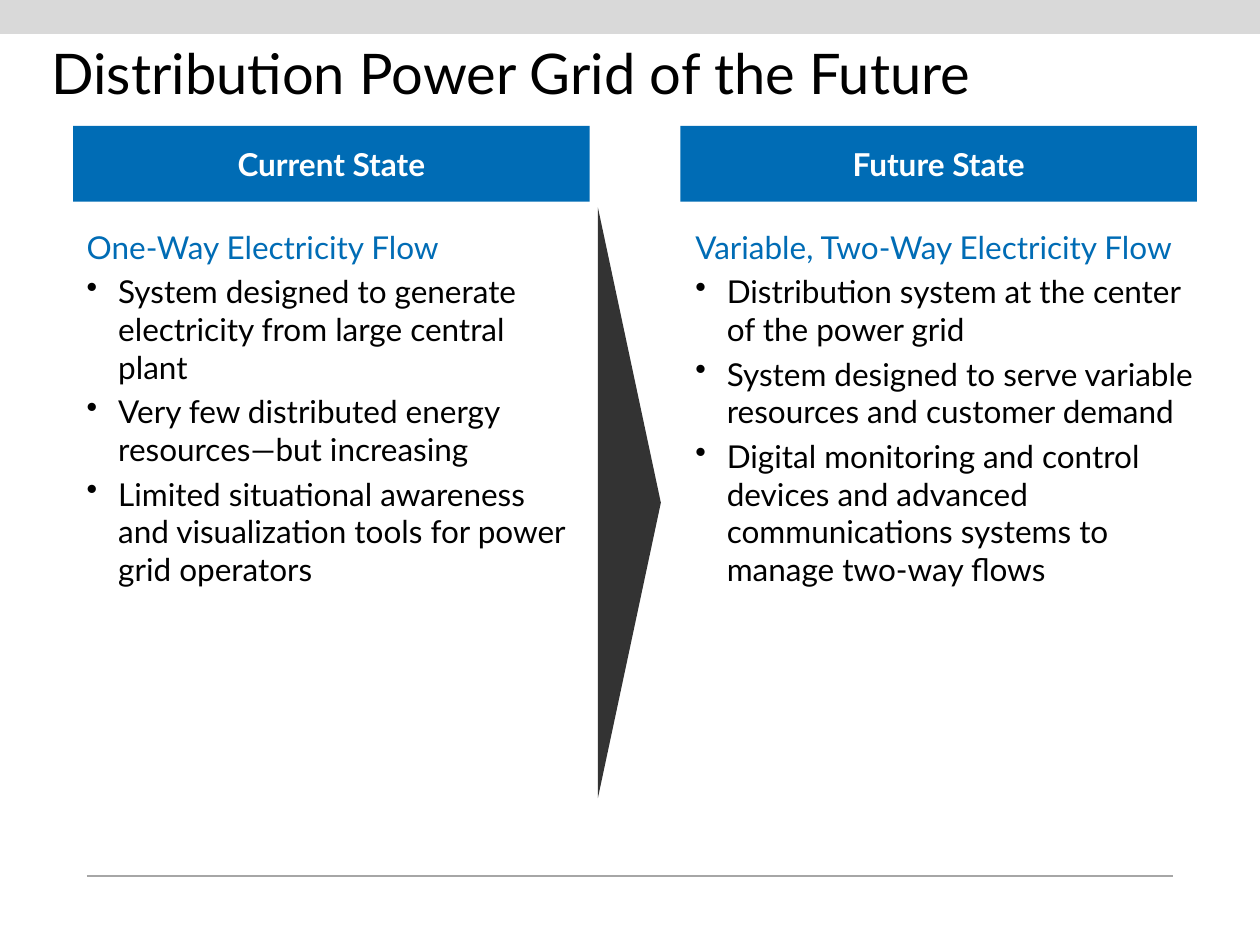
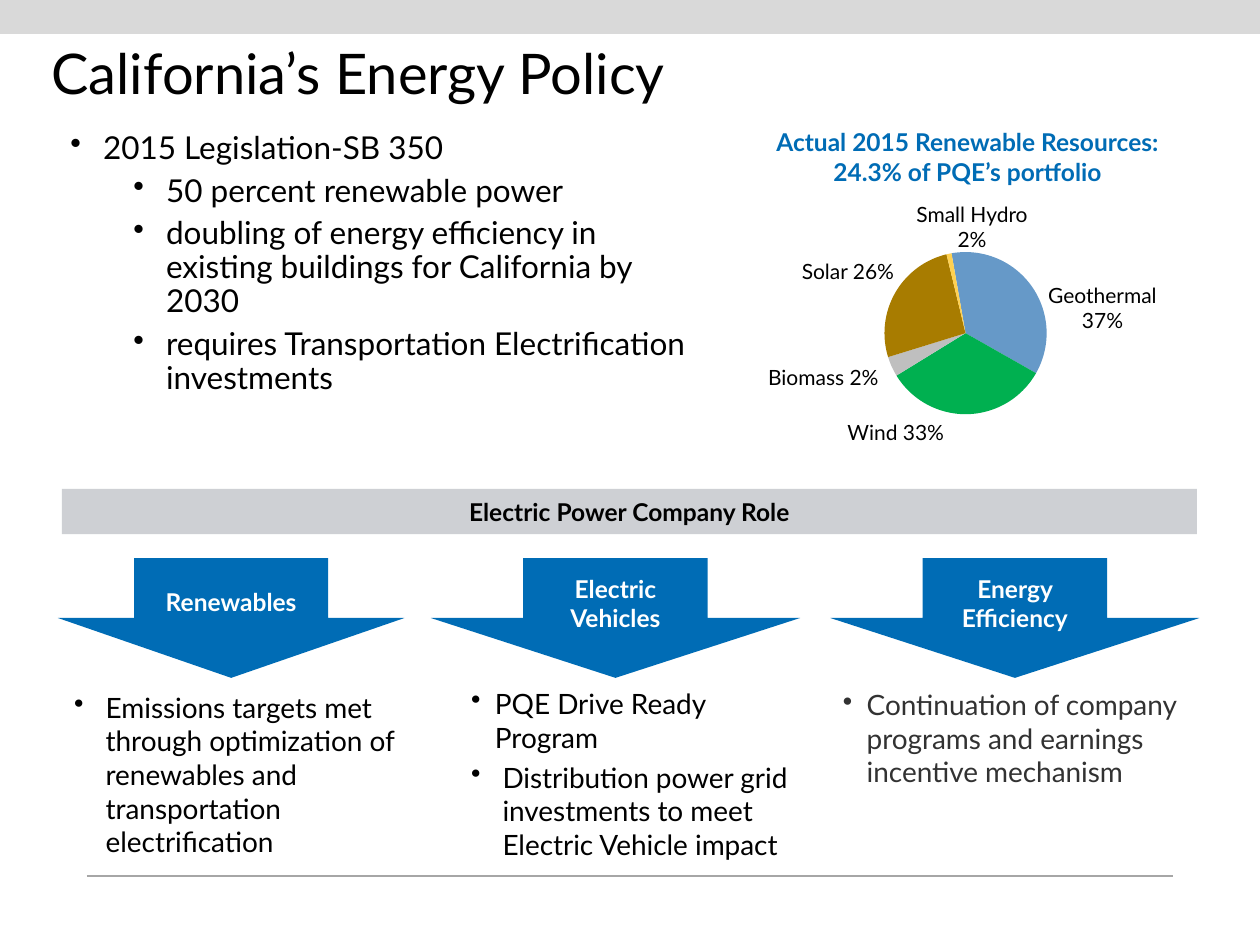
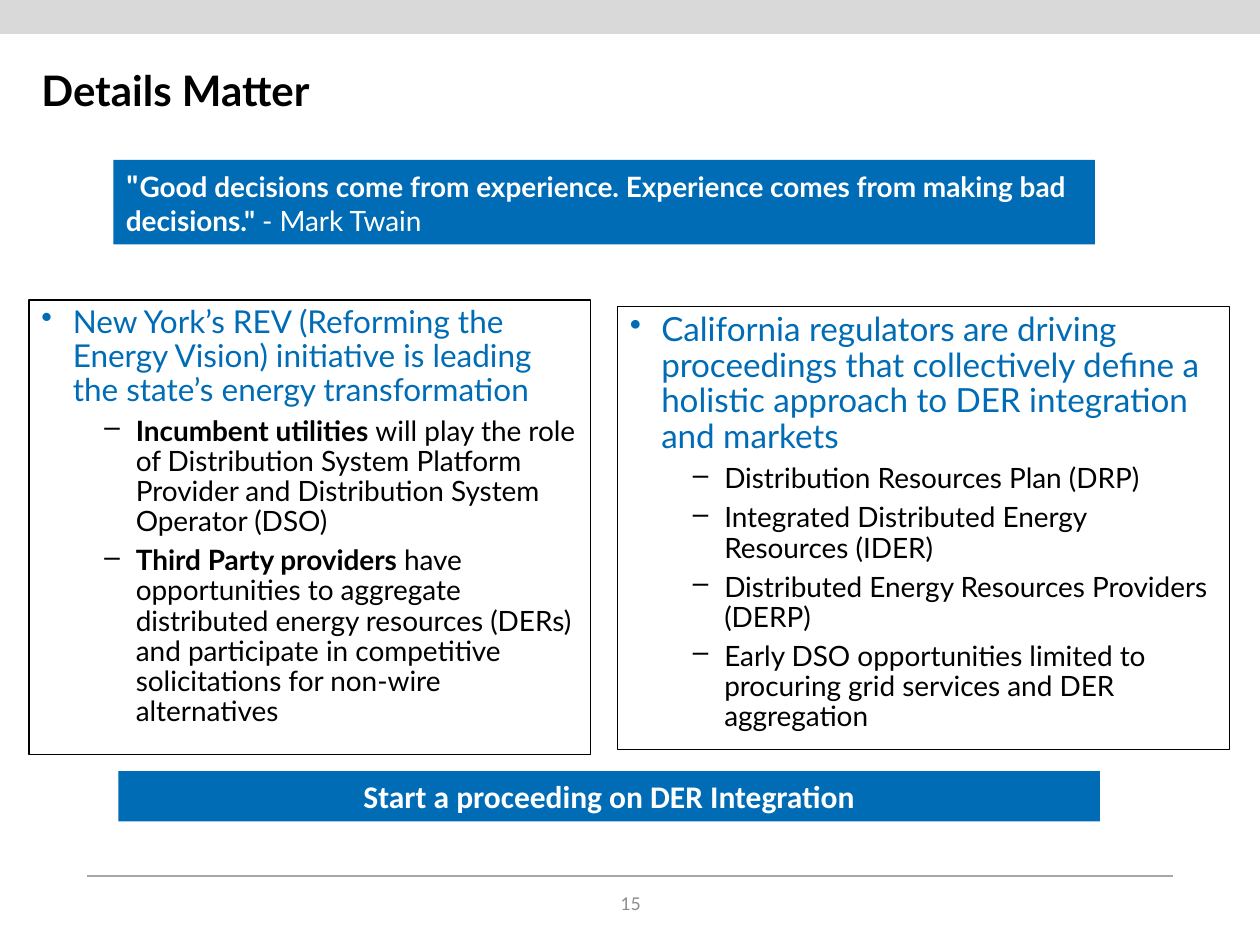
from dataclasses import dataclass
from lxml.etree import SubElement
from pptx import Presentation
from pptx.chart.data import CategoryChartData
from pptx.dml.color import RGBColor
from pptx.enum.chart import XL_CHART_TYPE
from pptx.enum.shapes import MSO_CONNECTOR, MSO_SHAPE
from pptx.enum.text import MSO_ANCHOR, PP_ALIGN
from pptx.oxml.ns import qn
from pptx.util import Inches, Pt

COLORS = {
    "blue": "006CB5", "black": "000000", "white": "FFFFFF", "band": "D9D9D9",
    "rule": "A6A6A6", "charcoal": "333333", "note": "323232", "role": "CED0D4",
    "number": "8C8C8C",
}
FONT = "Lato"


@dataclass
class Para:
    """A paragraph; text is a string or a list of (text, bold, font, size) spans."""
    text: str | list
    size: float = 18
    color: str = "black"
    bold: bool = False
    font: str = FONT
    centered: bool = False
    bullet: str = ""
    indent: float = 0.25
    hanging: float = 0.25
    before: float = 0
    spacing: float = 1


def point(text, **style):
    return Para(text, **{"bullet": "•", "before": 3.8, **style})


def legislation(text, indent=0.76):
    return point(text, indent=indent, hanging=0.26, before=5, spacing=0.9)


def headline(text, size):
    return point(text, size=size, color="blue", before=10, spacing=0.9)


def detail(text):
    return Para(text, 16, bullet="–", indent=0.75, before=5, spacing=0.9)


def label(text, size=14, color="white", **style):
    return Para(text, size, color, **{"bold": True, "centered": True, **style})


# Content
STATES = [
    ("Current State", 0.58, (0.59, 1.76, 4, 3.43), "One-Way Electricity Flow", [
        "System designed to generate electricity from large central plant",
        "Very few distributed energy resources—but increasing",
        "Limited situational awareness and visualization tools for power grid operators"]),
    ("Future State", 5.4, (5.42, 1.76, 4.21, 3), "Variable, Two-Way Electricity Flow", [
        "Distribution system at the center of the power grid",
        "System designed to serve variable resources and customer demand",
        "Digital monitoring and control devices and advanced communications systems "
        "to manage two-way flows"]),
]
POLICY = [
    legislation("2015 Legislation-SB 350", indent=0.26),
    legislation("50 percent renewable power"),
    legislation("doubling of energy efficiency in existing buildings for California by 2030"),
    legislation("requires Transportation Electrification investments"),
]
ROLES = [
    ("Renewables", (0.46, 2.75), 0.56, (0.49, 5.43, 2.85, 1.45), [
        point("Emissions targets met through optimization of renewables and "
              "transportation electrification", size=16)]),
    ("Electric Vehicles", (3.42, 2.93), 0.5, (3.64, 5.4, 2.76, 1.5), [
        point("PQE Drive Ready Program", size=16, indent=0.19, hanging=0.19, before=0),
        point("Distribution power grid investments to meet Electric Vehicle impact",
              size=16)]),
    ("Energy Efficiency", (6.59, 2.93), 0.5, (6.59, 5.41, 2.91, 0.91), [
        point("Continuation of company programs and earnings incentive mechanism",
              size=16, color="note", indent=0.19, hanging=0.19, before=0)]),
]
PIE_SLICES = [(36, "6699C8"), (33, "00B050"), (4, "BFBFBF"), (26, "A87C00"), (1, "FFD151")]
PIE_LABELS = [
    ("Solar 26%", (6.17, 2, 1.12, 0.3), 0.1),
    ("Small Hydro 2%", (7.08, 1.55, 1.27, 0.5), 0.1),
    ("Geothermal 37%", (8.14, 2.19, 1.22, 0.5), 0.05),
    ("Wind 33%", (6.51, 3.28, 1.2, 0.3), 0.1),
    ("Biomass 2%", (5.79, 2.84, 1.49, 0.3), 0.1),
]
PORTFOLIO = ["Actual 2015 Renewable Resources:", "24.3% of PQE’s portfolio"]
REGIONS = [
    ((0.23, 2.38, 4.46, 3.61), [
        headline("New York’s REV (Reforming the Energy Vision) initiative is leading "
                 "the state’s energy transformation", 18),
        detail([("Incumbent utilities ", True, FONT, 16),
                ("will play the role of Distribution System Platform Provider and "
                 "Distribution System Operator (DSO)", False, FONT, 16)]),
        detail([("Third Party providers ", True, FONT, 16),
                ("have opportunities to aggregate distributed energy resources (DERs) and "
                 "participate in competitive solicitations for non-wire alternatives",
                 False, FONT, 16)])]),
    ((4.9, 2.43, 4.86, 3.52), [
        headline("California regulators are driving proceedings that collectively define "
                 "a holistic approach to DER integration and markets", 19),
        detail("Distribution Resources Plan (DRP)"),
        detail("Integrated Distributed Energy Resources (IDER)"),
        detail("Distributed Energy Resources Providers (DERP)"),
        detail("Early DSO opportunities limited to procuring grid services and DER "
               "aggregation")]),
]
QUOTE = Para([
    ('"', True, "Calibri", 18),
    ('Good decisions come from experience. Experience comes from making bad decisions." ',
     True, FONT, 16),
    ("- Mark Twain", False, FONT, 16)], color="white")


def rgb(color):
    return RGBColor.from_string(COLORS.get(color, color))


def write(shape, paras, middle=False, inset=0.1):
    frame = shape.text_frame
    frame.word_wrap = True
    frame.vertical_anchor = MSO_ANCHOR.MIDDLE if middle else MSO_ANCHOR.TOP
    frame.margin_left = frame.margin_right = Inches(inset)
    for index, item in enumerate(paras):
        para = frame.add_paragraph() if index else frame.paragraphs[0]
        para.alignment = PP_ALIGN.CENTER if item.centered else PP_ALIGN.LEFT
        para.line_spacing = item.spacing
        para.space_before = Pt(item.before)
        if item.bullet:
            properties = para._p.get_or_add_pPr()
            properties.set("marL", str(Inches(item.indent)))
            properties.set("indent", str(-Inches(item.hanging)))
            SubElement(properties, qn("a:buChar")).set("char", item.bullet)
        spans = item.text
        if isinstance(spans, str):
            spans = [(spans, item.bold, item.font, item.size)]
        for text, bold, font, size in spans:
            span = para.add_run()
            span.text = text
            span.font.bold = bold
            span.font.name = font
            span.font.size = Pt(size)
            span.font.color.rgb = rgb(item.color)


def add_text(page, place, paras, middle=False, inset=0.1):
    write(page.shapes.add_textbox(*map(Inches, place)), paras, middle, inset)


def add_block(page, place, fill, paras=(), kind=MSO_SHAPE.RECTANGLE, adjust=(),
              outline=None, middle=True):
    block = page.shapes.add_shape(kind, *map(Inches, place))
    block.shadow.inherit = False
    block.fill.solid()
    block.fill.fore_color.rgb = rgb(fill)
    if outline:
        block.line.color.rgb = rgb(outline)
        block.line.width = Pt(0.75)
    else:
        block.line.fill.background()
    for index, value in enumerate(adjust):
        block.adjustments[index] = value
    write(block, paras, middle)
    return block


def add_page(deck, title, place=(0.31, 0.27, 9.41, 0.67), size=32, bold=False):
    """Add a slide with the top band, footer rule and title."""
    page = deck.slides.add_slide(deck.slide_layouts[6])
    add_block(page, (0, 0, 10, 0.27), "band")
    rule = page.shapes.add_connector(
        MSO_CONNECTOR.STRAIGHT, *map(Inches, (0.69, 6.95, 9.31, 6.95)))
    rule.line.color.rgb = rgb("rule")
    rule.line.width = Pt(1)
    SubElement(rule._element.spPr, qn("a:effectLst"))
    add_text(page, place, [Para(title, size, bold=bold, spacing=0.9)], middle=True)
    return page


def add_pie(page, place):
    data = CategoryChartData()
    data.categories = [str(number) for number in range(1, len(PIE_SLICES) + 1)]
    data.add_series("Series 1", [value for value, _ in PIE_SLICES])
    chart = page.shapes.add_chart(XL_CHART_TYPE.PIE, *map(Inches, place), data).chart
    chart.has_legend = chart.has_title = False
    chart.font.name = "Calibri"
    chart.font.size = Pt(18)
    chart.font.color.rgb = rgb("black")
    plot = chart.plots[0]
    plot.vary_by_categories = True
    for index, (_, color) in enumerate(PIE_SLICES):
        fill = plot.series[0].points[index].format.fill
        fill.solid()
        fill.fore_color.rgb = rgb(color)

    pie = plot._element
    angle = pie.find(qn("c:firstSliceAng"))
    if angle is None:
        angle = SubElement(pie, qn("c:firstSliceAng"))
    angle.set("val", "350")
    area = pie.getparent()
    layout = area.find(qn("c:layout"))
    if layout is None:
        layout = SubElement(area, qn("c:layout"))
        area.insert(0, layout)
    manual = SubElement(layout, qn("c:manualLayout"))
    settings = {"layoutTarget": "inner", "xMode": "edge", "yMode": "edge",
                "x": 0.04, "y": 0.03, "w": 0.94, "h": 0.94}
    for name, value in settings.items():
        SubElement(manual, qn(f"c:{name}")).set("val", str(value))


def build_grid_page(deck):
    page = add_page(deck, "Distribution Power Grid of the Future")
    for state, left, place, flow, points in STATES:
        add_text(page, place, [Para(flow, color="blue"), *map(point, points)])
        add_block(page, (left, 1, 4.1, 0.6), "blue", [label(state, 18)],
                  MSO_SHAPE.ROUNDED_RECTANGLE, [0])
    wedge = add_block(page, (2.65, 3.74, 4.69, 0.5), "charcoal",
                      kind=MSO_SHAPE.ISOSCELES_TRIANGLE, adjust=[0.5])
    wedge.rotation = 90


def build_policy_page(deck):
    page = add_page(deck, "California’s Energy Policy")
    add_text(page, (0.46, 1, 5.11, 2.46), POLICY)
    for role, (left, width), shaft, place, paras in ROLES:
        add_block(page, (left, 4.43, width, 0.95), "blue", [label(role)],
                  MSO_SHAPE.DOWN_ARROW, [shaft, 0.5])
        add_text(page, place, paras)
    add_block(page, (0.49, 3.88, 9.01, 0.36), "role",
              [label("Electric Power Company Role", color="black")])
    add_pie(page, (6.96, 1.96, 1.38, 1.37))
    for text, place, inset in PIE_LABELS:
        add_text(page, place, [label(text, 12, "black", bold=False)], True, inset)
    add_text(page, (5.65, 0.96, 4.06, 0.57),
             [label(text, color="blue") for text in PORTFOLIO])


def build_details_page(deck):
    page = add_page(deck, "Details Matter", (0.23, 0.4, 9.54, 0.67), 24, True)
    for place, paras in REGIONS:
        add_block(page, place, "white", paras, outline="black", middle=False)
    add_block(page, (0.9, 1.27, 7.79, 0.67), "blue", [QUOTE], middle=False)
    add_block(page, (0.94, 6.12, 7.79, 0.4), "blue",
              [label("Start a proceeding on DER Integration", 18, font="Calibri")],
              middle=False)
    add_text(page, (3.88, 6.97, 2.25, 0.4),
             [label("15", 10, "number", bold=False)], middle=True)


def main():
    deck = Presentation()
    deck.slide_width, deck.slide_height = Inches(10), Inches(7.5)
    build_grid_page(deck)
    build_policy_page(deck)
    build_details_page(deck)
    deck.save("out.pptx")


if __name__ == "__main__":
    main()
